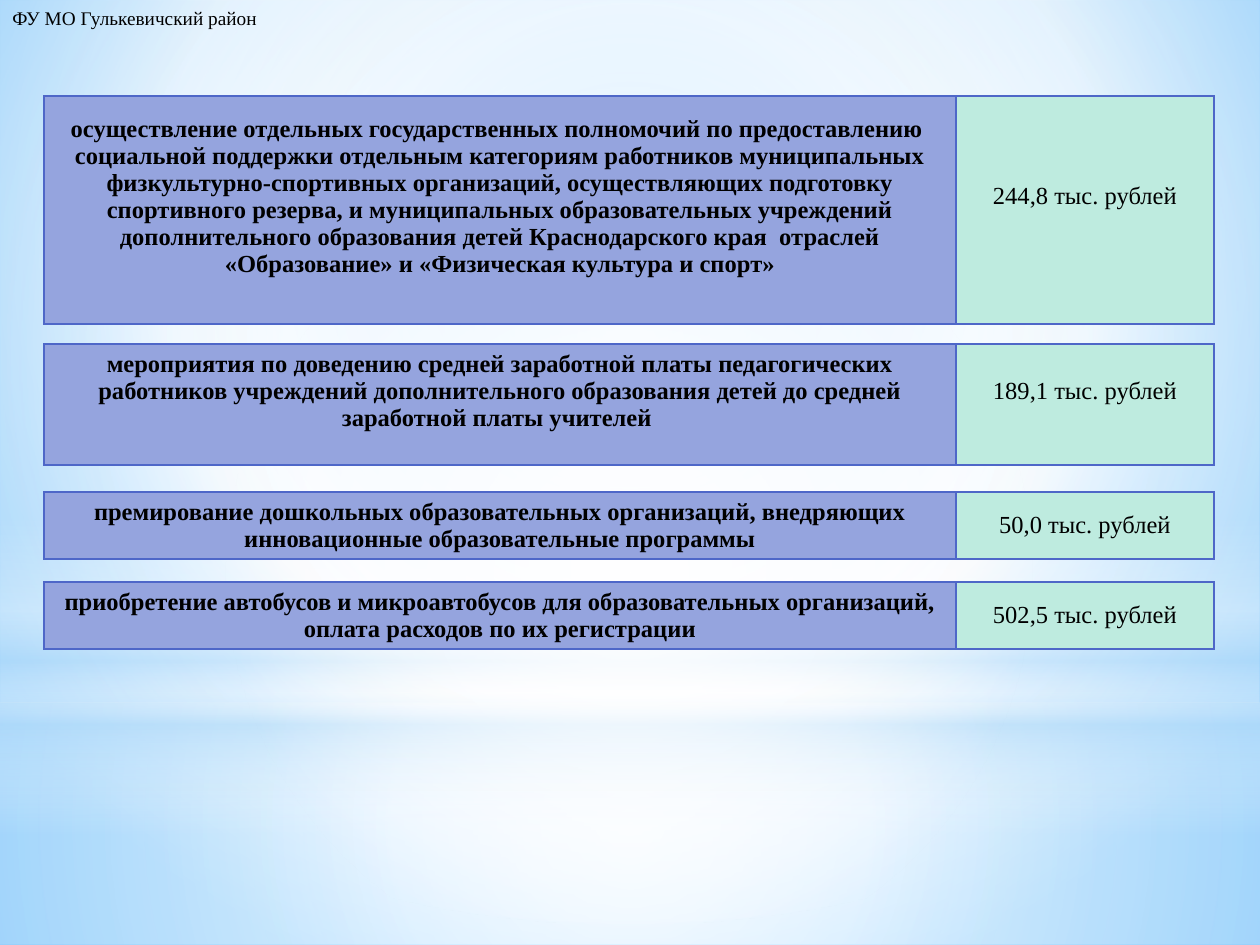
from dataclasses import dataclass

from lxml.etree import SubElement
from pptx import Presentation
from pptx.dml.color import RGBColor
from pptx.enum.shapes import MSO_SHAPE
from pptx.enum.text import MSO_ANCHOR, MSO_AUTO_SIZE, PP_ALIGN
from pptx.oxml import parse_xml
from pptx.oxml.ns import nsdecls, qn
from pptx.util import Emu, Pt

Stops = list[tuple[int, str, int]]  # place %, colour, opacity %
Box = tuple[int, int, int, int]  # left, top, width, height in px


@dataclass(frozen=True)
class Theme:
    font: str = "Times New Roman"
    ink: str = "000000"
    name: str = "95A4DE"
    sum: str = "BEEBDF"
    edge: str = "4E67C8"
    sky: str = "B4DCFA"
    white: str = "FFFFFF"
    body: int = 14
    head: int = 11


@dataclass(frozen=True)
class Glow:
    kind: MSO_SHAPE
    box: Box
    stops: Stops
    shade: str


@dataclass(frozen=True)
class Grant:
    top: int
    high: int
    name: str
    sum: str
    lift: int = 0  # extra space under the text


THEME = Theme()
LEFT = 44
COLS = (912, 258)
PAD = 6
WIDE, HIGH = 1260, 945
CENTRE = (50, 50, 50, 50)


def px(n: int) -> Emu:
    return Emu(round(n * 914400 / 126))


def radial(left: int, top: int, right: int, low: int) -> str:
    return (f'<a:path path="circle"><a:fillToRect l="{left}000" t="{top}000" '
            f'r="{right}000" b="{low}000"/></a:path>')


LINEAR = '<a:lin ang="5400000" scaled="0"/>'

GLOWS = [
    Glow(MSO_SHAPE.RECTANGLE, (0, 703, WIDE, 242),
         [(0, THEME.white, 91), (37, THEME.white, 76), (100, THEME.sky, 79)],
         radial(*CENTRE)),
    Glow(MSO_SHAPE.RECTANGLE, (0, 0, WIDE, 703),
         [(0, THEME.white, 89), (48, THEME.white, 62), (100, THEME.sky, 79)],
         radial(*CENTRE)),
    Glow(MSO_SHAPE.RECTANGLE, (0, 519, WIDE, 315),
         [(0, THEME.white, 0), (29, THEME.white, 30), (45, THEME.sky, 40),
          (55, THEME.white, 26), (65, THEME.sky, 60), (100, THEME.white, 0)],
         LINEAR),
    Glow(MSO_SHAPE.OVAL, (0, 221, WIDE, 703),
         [(0, THEME.white, 100), (56, THEME.white, 0)], radial(*CENTRE)),
]

GRANTS = [
    Grant(96, 228, "осуществление отдельных государственных полномочий по "
          "предоставлению  социальной поддержки отдельным категориям работников "
          "муниципальных физкультурно-спортивных организаций, осуществляющих "
          "подготовку спортивного резерва, и муниципальных образовательных "
          "учреждений дополнительного образования детей Краснодарского края  "
          "отраслей «Образование» и «Физическая культура и спорт»",
          "244,8 тыс. рублей", 27),
    Grant(344, 121, "мероприятия по доведению средней заработной платы "
          "педагогических работников учреждений дополнительного образования "
          "детей до средней заработной платы учителей ",
          "189,1 тыс. рублей", 27),
    Grant(492, 67, "премирование дошкольных образовательных организаций, "
          "внедряющих инновационные образовательные программы",
          "50,0 тыс. рублей"),
    Grant(582, 67, "приобретение автобусов и микроавтобусов для образовательных "
          "организаций, оплата расходов по их регистрации",
          "502,5 тыс. рублей"),
]


def blend(root, stops: Stops, shade: str) -> None:
    """Swap the solid fill found under root for a gradient."""
    marks = "".join(
        f'<a:gs pos="{at}000"><a:srgbClr val="{tint}">'
        f'<a:alpha val="{see}000"/></a:srgbClr></a:gs>'
        for at, tint, see in stops)
    fill = parse_xml(f'<a:gradFill {nsdecls("a")} rotWithShape="1">'
                     f'<a:gsLst>{marks}</a:gsLst>{shade}</a:gradFill>')
    old = root.find(".//" + qn("a:solidFill"))
    old.getparent().replace(old, fill)


def add_glow(slide, glow: Glow) -> None:
    shape = slide.shapes.add_shape(glow.kind, *map(px, glow.box))
    shape.shadow.inherit = False
    shape.line.fill.background()
    shape.fill.solid()
    shape.fill.fore_color.rgb = RGBColor.from_string(THEME.white)
    blend(shape.element, glow.stops, glow.shade)


def add_run(para, text: str, size: int, bold: bool = False) -> None:
    run = para.add_run()
    run.text = text
    font = run.font
    font.name, font.size, font.bold = THEME.font, Pt(size), bold
    font.color.rgb = RGBColor.from_string(THEME.ink)


def add_edges(cell) -> None:
    props = cell._tc.get_or_add_tcPr()
    for spot, side in enumerate(("lnL", "lnR", "lnT", "lnB")):
        line = SubElement(props, qn(f"a:{side}"), w=str(Pt(1)))
        fill = SubElement(line, qn("a:solidFill"))
        SubElement(fill, qn("a:srgbClr"), val=THEME.edge)
        props.insert(spot, line)


def add_grant(slide, grant: Grant) -> None:
    frame = slide.shapes.add_table(1, 2, px(LEFT), px(grant.top),
                                   px(sum(COLS)), px(grant.high))
    table = frame.table
    table.first_row = table.horz_banding = False
    parts = ((grant.name, THEME.name, True), (grant.sum, THEME.sum, False))
    for i, (text, tint, bold) in enumerate(parts):
        table.columns[i].width = px(COLS[i])
        cell = table.cell(0, i)
        cell.fill.solid()
        cell.fill.fore_color.rgb = RGBColor.from_string(tint)
        cell.vertical_anchor = MSO_ANCHOR.MIDDLE
        cell.margin_top = px(PAD)
        cell.margin_bottom = px(PAD + grant.lift)
        add_edges(cell)
        para = cell.text_frame.paragraphs[0]
        para.alignment = PP_ALIGN.CENTER
        add_run(para, text, THEME.body, bold)


def add_head(slide, text: str) -> None:
    frame = slide.shapes.add_textbox(px(0), px(0), px(275), px(36)).text_frame
    frame.word_wrap = False
    frame.auto_size = MSO_AUTO_SIZE.SHAPE_TO_FIT_TEXT
    add_run(frame.paragraphs[0], text, THEME.head)


def main() -> None:
    deck = Presentation()
    deck.slide_width, deck.slide_height = px(WIDE), px(HIGH)
    slide = deck.slides.add_slide(deck.slide_layouts[6])

    # Backdrop
    back = slide.background.fill
    back.solid()
    back.fore_color.rgb = RGBColor.from_string(THEME.white)
    blend(slide.element, [(0, "9ED5FF", 100), (60, THEME.white, 100),
                          (100, "5BB9FF", 100)], radial(20, 10, 20, 60))
    for glow in GLOWS:
        add_glow(slide, glow)

    # Grants with their sums
    for grant in GRANTS:
        add_grant(slide, grant)

    # Page header
    add_head(slide, "ФУ МО Гулькевичский район")
    deck.save("out.pptx")


if __name__ == "__main__":
    main()
